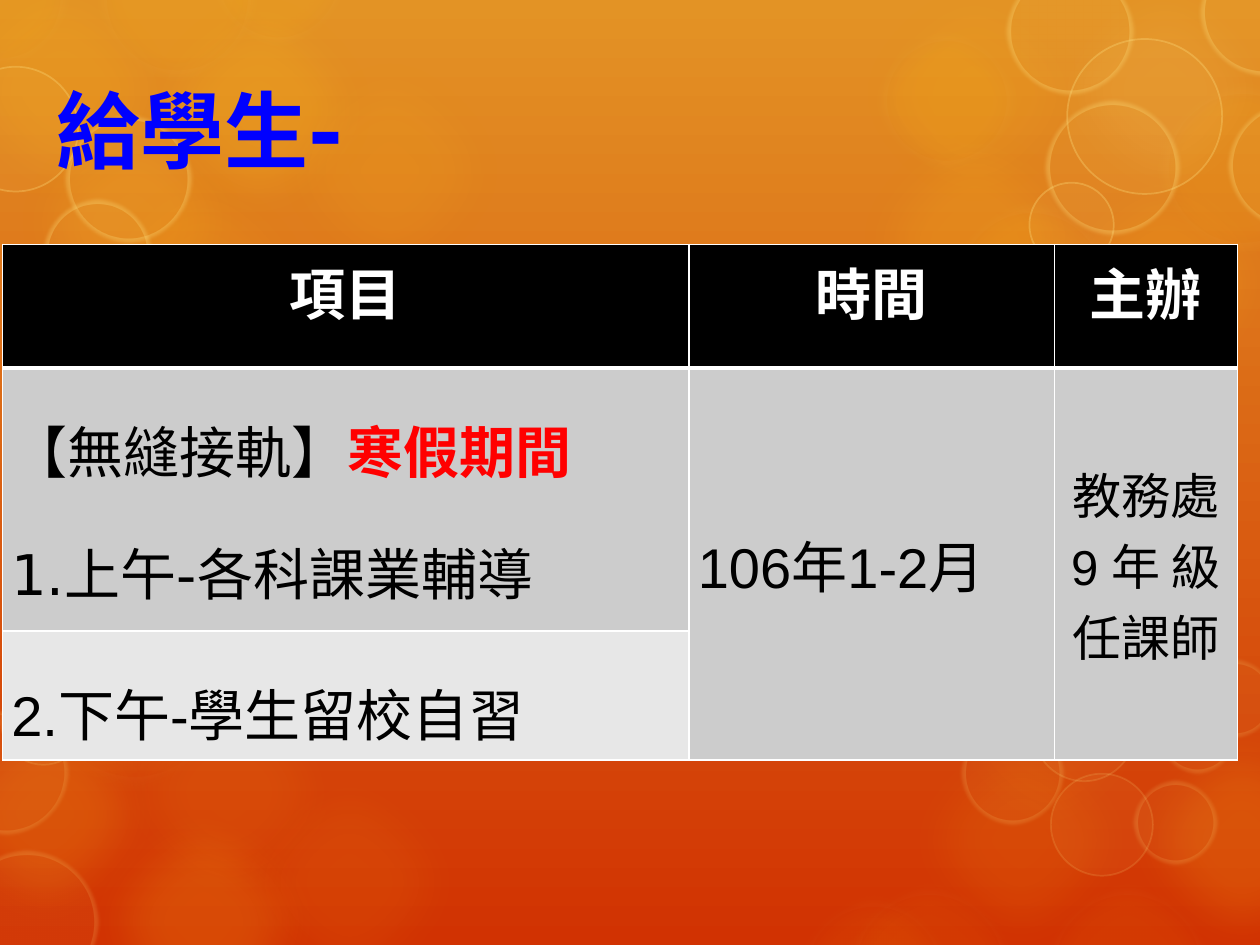
from dataclasses import dataclass

from lxml.etree import SubElement
from pptx import Presentation
from pptx.dml.color import RGBColor
from pptx.enum.shapes import MSO_SHAPE as Shape
from pptx.enum.text import MSO_ANCHOR as Anchor, PP_ALIGN as Align
from pptx.oxml.ns import qn
from pptx.util import Inches, Pt


@dataclass(frozen=True)
class Theme:
    sky: str = "E39325"
    ember: str = "D13202"
    amber: str = "FDC61B"
    cream: str = "FEEBAE"
    straw: str = "FFE281"
    blue: str = "0000FF"
    red: str = "FF0000"
    black: str = "000000"
    white: str = "FFFFFF"
    band: str = "CCCCCC"
    light_band: str = "E7E7E7"
    sans: str = "DejaVu Sans"
    latin: str = "Arial"
    title_size: int = 48
    body_size: int = 32
    host_size: int = 28


T = Theme()
WIDTH, HEIGHT = 10, 7.5
GLOW = 2.09

# (fill, fill %, line, line pt, line %, soft edge pt): bubbles as (left, top, diameter)
BUBBLES = {
    (T.amber, 8, None, 0, 0, 25): [
        (-0.26, 4.42, GLOW), (0.77, 5.24, GLOW), (1.73, 5.96, GLOW)],
    (T.amber, 10, None, 0, 0, 25): [
        (0.57, 1.2, GLOW), (2.05, 0.31, GLOW), (6.69, -0.3, GLOW), (7.06, 5.62, GLOW)],
    (T.amber, 16, None, 0, 0, 25): [
        (0.57, 6.27, GLOW), (8.81, 5.62, GLOW), (-0.69, 5.41, GLOW)],
    (T.amber, 14, None, 0, 0, 25): [(-0.56, -0.33, GLOW)],
    (T.amber, 20, None, 0, 0, 25): [(1.01, -0.18, GLOW)],
    (T.amber, 15, None, 0, 0, 25): [
        (0, 0.72, GLOW), (8.2, 1.2, GLOW), (6.69, 0.86, GLOW)],
    (T.amber, 5, None, 0, 0, 25): [(7.29, 4.77, GLOW)],
    (T.straw, 10, None, 0, 0, 25): [(8.2, -0.33, GLOW)],
    (T.amber, 10, T.cream, 14, 6, 12): [
        (9.18, 0.65, 1.37), (6.94, 0.23, 1.14), (7.52, 1.59, 1.33), (0.75, -0.66, 1.31),
        (1.64, -0.75, 1.14), (-0.57, -0.58, 1.14)],
    (T.amber, 6, T.cream, 14, 4, 12): [
        (0.3, 4.73, 1.53), (6.31, 7.1, 1.25), (6.7, 7.01, 1.36), (8.28, 7.01, 1.34)],
    (T.straw, 5, T.straw, 1, 15, 0): [
        (0.01, 5.4, 0.67), (8.34, 6.14, 0.81), (8.2, 5.39, 0.81)],
    (T.straw, 5, T.straw, 5, 15, 2.5): [
        (-0.35, 6.75, 1.13), (-0.44, 5.64, 0.98), (7.63, 5.73, 0.81), (9, 6.2, 0.66),
        (9.2, 5.53, 0.61), (9.5, 5.24, 0.61)],
    (T.straw, 5, T.straw, 1, 30, 0): [
        (-0.37, 0.53, 0.99), (8.47, 0.31, 1.23), (8.17, 1.45, 0.67)],
    (T.straw, 5, T.straw, 5, 30, 2.5): [
        (0.52, 0.92, 1), (0.35, 1.59, 0.85), (7.99, -0.25, 1), (9.53, -0.4, 1),
        (9.75, 0.82, 0.99), (8.3, 0.8, 1.06)],
}


def rgb(code):
    return RGBColor.from_string(code)


def write(paragraph, text, *, size=T.body_size, font=T.sans, color=T.black,
          bold=False, align=Align.LEFT, spacing=None):
    run = paragraph.add_run()
    run.text = text
    run.font.size, run.font.name, run.font.bold = Pt(size), font, bold
    run.font.color.rgb = rgb(color)
    paragraph.alignment = align
    if spacing:
        paragraph.line_spacing = spacing


def style_bubble(bubble, fill, fill_share, line, width, line_share, soft):
    bubble.shadow.inherit = False
    bubble.fill.solid()
    bubble.fill.fore_color.rgb = rgb(fill)
    if line:
        bubble.line.color.rgb = rgb(line)
        bubble.line.width = Pt(width)
    else:
        bubble.line.fill.background()
    for color, share in zip(bubble.element.spPr.iter(qn("a:srgbClr")), (fill_share, line_share)):
        SubElement(color, qn("a:alpha"), val=str(share * 1000))
    if soft:
        effects = bubble.element.spPr.find(qn("a:effectLst"))
        SubElement(effects, qn("a:softEdge"), rad=str(Pt(soft)))


def add_backdrop(slide):
    """Paint the gradient and put the bubbles on the slide's layout."""
    fill = slide.background.fill
    fill.gradient()
    fill.gradient_angle = 270
    for stop, color in zip(fill.gradient_stops, (T.sky, T.ember)):
        stop.color.rgb = rgb(color)
    layout_tree = slide.slide_layout.shapes.element
    spots = [(look, spot) for look, group in BUBBLES.items() for spot in group]
    for number, (look, (left, top, size)) in enumerate(spots, 100):
        bubble = slide.shapes.add_shape(Shape.OVAL, *map(Inches, (left, top, size, size)))
        style_bubble(bubble, *look)
        bubble.element.nvSpPr.cNvPr.set("id", str(number))
        layout_tree.append(bubble.element)


def add_title(slide, box):
    title = slide.shapes.title
    title.left, title.top, title.width, title.height = map(Inches, box)
    title.text_frame.vertical_anchor = Anchor.MIDDLE
    write(title.text_frame.paragraphs[0], "給學生-", size=T.title_size, color=T.blue, bold=True)


def border(cell, widths):
    properties = cell._tc.get_or_add_tcPr()
    for place, (side, width) in enumerate(zip("LRTB", widths)):
        line = SubElement(properties, qn(f"a:ln{side}"), w=str(Pt(width)))
        paint = SubElement(line, qn("a:solidFill"))
        SubElement(paint, qn("a:srgbClr"), val=T.white)
        properties.insert(place, line)


def fill_cell(cell, lines, anchor=Anchor.TOP, **style):
    """Write lines, each a list of (text, own format) runs, into a cell."""
    cell.vertical_anchor = anchor
    cell.margin_left = cell.margin_right = Inches(0.07)
    cell.margin_top = cell.margin_bottom = 0
    frame = cell.text_frame
    for index, runs in enumerate(lines):
        paragraph = frame.add_paragraph() if index else frame.paragraphs[0]
        for text, own in runs:
            write(paragraph, text, **{**style, **own})


def add_schedule(slide, box):
    left, top, width, height = map(Inches, box)
    table = slide.shapes.add_table(3, 3, left, top, width, height).table
    for column, share in zip(table.columns, (0.556, 0.296, 0.148)):
        column.width = int(width * share)
    for row, share in zip(table.rows, (0.24, 0.51, 0.25)):
        row.height = int(height * share)
    for r, band in enumerate((T.black, T.band, T.light_band)):
        for c in range(3):
            cell = table.cell(r, c)
            cell.fill.solid()
            cell.fill.fore_color.rgb = rgb(T.band if r and c else band)
            border(cell, (1, 1, 3 if r == 1 else 1, 3 if r == 0 else 1))
    for c in (1, 2):
        table.cell(1, c).merge(table.cell(2, c))

    for c, heading in enumerate(("項目", "時間", "主辦")):
        write(table.cell(0, c).text_frame.paragraphs[0], heading,
              color=T.white, bold=True, align=Align.CENTER)
    fill_cell(table.cell(1, 0), [
        [("【無縫接軌】", {}), ("寒假期間", {"color": T.red, "bold": True})],
        [("1.上午-各科課業輔導", {})]], spacing=1.5)
    fill_cell(table.cell(2, 0), [[("2.下午-學生留校自習", {})]], font=T.latin, spacing=1.5)
    fill_cell(table.cell(1, 1), [[("106年1-2月", {})]], Anchor.MIDDLE, font=T.latin)
    fill_cell(table.cell(1, 2), [
        [("教務處", {"font": T.sans})], [("9 年 級", {})], [("任課師", {})]],
        Anchor.MIDDLE, font=T.latin, size=T.host_size, align=Align.CENTER)


def main():
    deck = Presentation()
    deck.slide_width, deck.slide_height = Inches(WIDTH), Inches(HEIGHT)
    slide = deck.slides.add_slide(deck.slide_layouts[5])
    add_backdrop(slide)
    add_title(slide, (0.35, 0.52, 7.79, 1.01))
    add_schedule(slide, (0.02, 1.94, 9.8, 4.09))
    deck.save("out.pptx")


if __name__ == "__main__":
    main()
